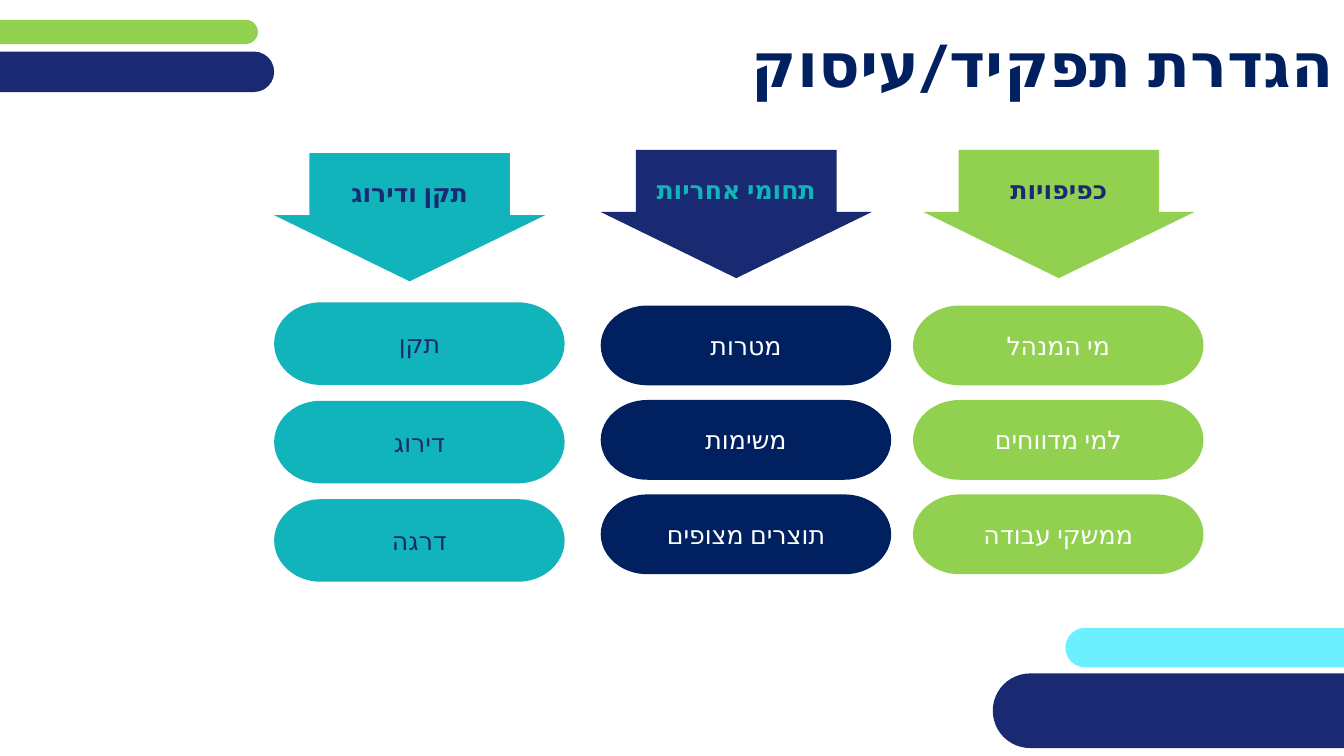
"""Build a right-to-left slide that defines a role in three arrow-headed columns."""
import pptx
import pptx.dml.color
import pptx.enum.shapes
import pptx.enum.text
import pptx.oxml
import pptx.oxml.ns
import pptx.util

Cm = pptx.util.Cm
SHAPES = pptx.enum.shapes.MSO_SHAPE
ALIGN = pptx.enum.text.PP_ALIGN
FONT = "League Spartan"
COLOURS = {
    "aqua": "6CF0FF",
    "green": "92D050",
    "indigo": "192A72",
    "navy": "002060",
    "teal": "12B4BC",
    "white": "FFFFFF",
}
BARS = [
    ("aqua", 26.85, 15.82, 13.23, 1),
    ("green", -0.71, 0.5, 7.21, 0.61),
    ("indigo", -1.35, 1.3, 8.26, 1.02),
    ("indigo", 25.02, 16.97, 10.44, 1.88),
]
COLUMNS = [
    {"heading": "כפיפויות", "items": ["מי המנהל", "למי מדווחים", "ממשקי עבודה"],
     "arrow": ("green", "indigo", 23.27, 3.78),
     "pills": ("green", "white", 23.01, 7.7, 2.01, 2.38)},
    {"heading": "תחומי אחריות", "items": ["מטרות", "משימות", "תוצרים מצופים"],
     "arrow": ("indigo", "teal", 15.14, 3.78),
     "pills": ("navy", "white", 15.14, 7.7, 2.01, 2.38)},
    {"heading": "תקן ודירוג", "items": ["תקן", "דירוג", "דרגה"],
     "arrow": ("teal", "indigo", 6.91, 3.86),
     "pills": ("teal", "indigo", 6.91, 7.62, 2.08, 2.48)},
]


def rgb(name):
    """Return the named colour."""
    return pptx.dml.color.RGBColor.from_string(COLOURS[name])


def write(box, text, colour, size, bold=False, align=ALIGN.CENTER):
    """Put one right-to-left line of text into a box."""
    frame = box.text_frame
    frame.word_wrap = True
    frame.vertical_anchor = pptx.enum.text.MSO_ANCHOR.MIDDLE
    para = frame.paragraphs[0]
    para.alignment = align
    para._p.get_or_add_pPr().set("rtl", "1")
    span = para.add_run()
    span.text = text
    for key, value in {"name": FONT, "size": pptx.util.Pt(size), "bold": bold}.items():
        setattr(span.font, key, value)
    span.font.color.rgb = rgb(colour)
    properties = span._r.get_or_add_rPr()
    properties.set("lang", "he-IL")
    script_font = pptx.oxml.parse_xml(
        f'<a:cs {pptx.oxml.ns.nsdecls("a")} typeface="{FONT}"/>')
    properties.append(script_font)


def add_block(page, kind, fill, left, top, width, height, adjustments=()):
    """Add a flat filled shape without an outline."""
    box = page.shapes.add_shape(kind, Cm(left), Cm(top), Cm(width), Cm(height))
    box.shadow.inherit = False
    box.fill.solid()
    box.fill.fore_color.rgb = rgb(fill)
    box.line.fill.background()
    for index, value in enumerate(adjustments):
        box.adjustments[index] = value
    return box


def add_title(page, text):
    """Add the slide title across the top."""
    box = page.shapes.add_textbox(Cm(0), Cm(0.58), Cm(33.87), Cm(2.01))
    write(box, text, "navy", 44, bold=True, align=ALIGN.RIGHT)


def add_column(page, column):
    """Add a heading arrow and the pills below it."""
    fill, ink, left, top = column["arrow"]
    arrow = add_block(page, SHAPES.DOWN_ARROW, fill, left, top, 6.83, 3.23, (0.74, 0.516))
    write(arrow, column["heading"], ink, 18, bold=True)
    fill, ink, left, top, height, pitch = column["pills"]
    for row, item in enumerate(column["items"]):
        pill = add_block(page, SHAPES.FLOWCHART_TERMINATOR, fill,
                         left, top + row * pitch, 7.32, height)
        write(pill, item, ink, 18)


def main():
    """Build and save the deck."""
    deck = pptx.Presentation()
    deck.slide_width, deck.slide_height = Cm(33.87), Cm(19.05)
    page = deck.slides.add_slide(deck.slide_layouts[6])
    for fill, *place in BARS:
        add_block(page, SHAPES.ROUNDED_RECTANGLE, fill, *place, adjustments=(0.5,))
    add_title(page, "הגדרת תפקיד/עיסוק")
    for column in COLUMNS:
        add_column(page, column)
    deck.save("out.pptx")


if __name__ == "__main__":
    main()
